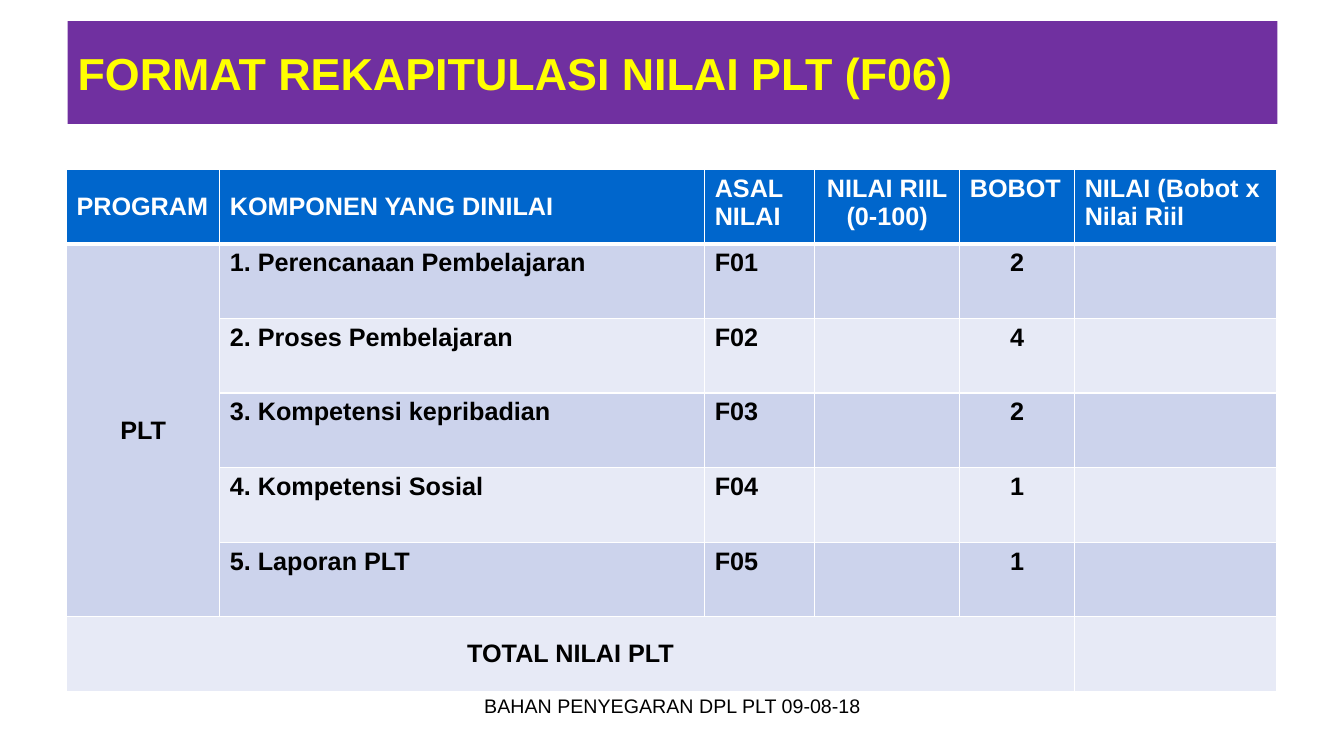
import pptx
import pptx.dml.color
import pptx.enum.text
import pptx.oxml
import pptx.oxml.ns
import pptx.util

RGBColor = pptx.dml.color.RGBColor
Inches = pptx.util.Inches
Pt = pptx.util.Pt
ALIGN = pptx.enum.text.PP_ALIGN
ANCHOR = pptx.enum.text.MSO_ANCHOR

PURPLE = RGBColor(0x70, 0x30, 0xA0)
YELLOW = RGBColor(0xFF, 0xFF, 0x00)
OUTLINE = RGBColor(0x33, 0x99, 0xFF)
BLUE = RGBColor(0x00, 0x66, 0xCC)
BAND_DARK = RGBColor(0xCC, 0xD3, 0xEC)
BAND_LIGHT = RGBColor(0xE7, 0xEA, 0xF6)
WHITE = RGBColor(0xFF, 0xFF, 0xFF)
BLACK = RGBColor(0x00, 0x00, 0x00)

TITLE = "FORMAT REKAPITULASI NILAI PLT (F06)"
FOOTER = "BAHAN PENYEGARAN DPL PLT 09-08-18"
HEADERS = ["PROGRAM", "KOMPONEN YANG DINILAI", "ASAL NILAI",
           "NILAI RIIL\n(0-100)", "BOBOT", "NILAI (Bobot x Nilai Riil"]
COMPONENTS = [
    ("1. Perencanaan Pembelajaran", "F01", "2"),
    ("2. Proses Pembelajaran", "F02", "4"),
    ("3. Kompetensi kepribadian", "F03", "2"),
    ("4. Kompetensi Sosial", "F04", "1"),
    ("5. Laporan PLT", "F05", "1"),
]
ROWS = [HEADERS]
ROWS += [["", name, source, "", weight, ""] for name, source, weight in COMPONENTS]
ROWS += [["TOTAL NILAI PLT", "", "", "", "", ""]]
ROWS[1][0] = "PLT"
LAST = len(ROWS) - 1
COLUMN_WIDTHS = [1.52, 4.81, 1.09, 1.44, 1.14, 2]
ROW_HEIGHT = 0.74
CENTERED = {(0, 3), (1, 0), (LAST, 0)} | {(row, 4) for row in range(1, LAST)}
MIDDLE = {(0, 0), (0, 1), (1, 0), (LAST, 0)}


def line_xml(tag, color, points):
    return pptx.oxml.parse_xml(
        f'<a:{tag} {pptx.oxml.ns.nsdecls("a")} w="{Pt(points)}">'
        f'<a:solidFill><a:srgbClr val="{color}"/></a:solidFill></a:{tag}>')


def format_text(text_frame, size, color, bold, alignment):
    for paragraph in text_frame.paragraphs:
        paragraph.alignment = alignment
        for run in paragraph.runs:
            run.font.name = "Arial"
            run.font.size = Pt(size)
            run.font.bold = bold
            run.font.color.rgb = color


def add_title(slide):
    title = slide.shapes.title
    title.left, title.top = Inches(0.67), Inches(0.21)
    title.width, title.height = Inches(12), Inches(1.02)
    title.fill.solid()
    title.fill.fore_color.rgb = PURPLE
    frame = title.text_frame
    frame.text = TITLE
    frame.auto_size = pptx.enum.text.MSO_AUTO_SIZE.NONE
    frame.vertical_anchor = ANCHOR.MIDDLE
    format_text(frame, 32, YELLOW, True, ALIGN.LEFT)
    properties = frame.paragraphs[0].runs[0].font._element
    properties.insert(0, line_xml("ln", OUTLINE, 1.75))


def format_cell(cell, row, column):
    cell.text_frame.text = ROWS[row][column]
    alignment = ALIGN.CENTER if (row, column) in CENTERED else ALIGN.LEFT
    format_text(cell.text_frame, 18, BLACK if row else WHITE, True, alignment)
    cell.vertical_anchor = ANCHOR.MIDDLE if (row, column) in MIDDLE else ANCHOR.TOP
    cell.fill.solid()
    band = BAND_DARK if row % 2 else BAND_LIGHT
    cell.fill.fore_color.rgb = band if row else BLUE
    top, bottom = (3 if row == 1 else 1), (3 if row == 0 else 1)
    borders = [("lnL", 1), ("lnR", 1), ("lnT", top), ("lnB", bottom)]
    properties = cell._tc.get_or_add_tcPr()
    for position, (tag, points) in enumerate(borders):
        properties.insert(position, line_xml(tag, WHITE, points))


def add_score_table(slide):
    table = slide.shapes.add_table(
        len(ROWS), len(HEADERS), Inches(0.66), Inches(1.68),
        Inches(sum(COLUMN_WIDTHS)), Inches(ROW_HEIGHT * len(ROWS))).table
    for column, width in zip(table.columns, COLUMN_WIDTHS):
        column.width = Inches(width)
    for row_index, row in enumerate(table.rows):
        row.height = Inches(ROW_HEIGHT)
        for column_index, cell in enumerate(row.cells):
            format_cell(cell, row_index, column_index)
    table.cell(1, 0).merge(table.cell(LAST - 1, 0))
    table.cell(LAST, 0).merge(table.cell(LAST, 4))


def add_footer(slide):
    footer = slide.shapes.add_textbox(
        Inches(4.56), Inches(6.83), Inches(4.22), Inches(0.52))
    footer.text_frame.word_wrap = True
    footer.text_frame.text = FOOTER
    format_text(footer.text_frame, 14, BLACK, False, ALIGN.CENTER)


def main():
    presentation = pptx.Presentation()
    presentation.slide_width = Inches(13.33)
    presentation.slide_height = Inches(7.5)
    slide = presentation.slides.add_slide(presentation.slide_layouts[5])
    add_title(slide)
    add_score_table(slide)
    add_footer(slide)
    presentation.save("out.pptx")


if __name__ == "__main__":
    main()
